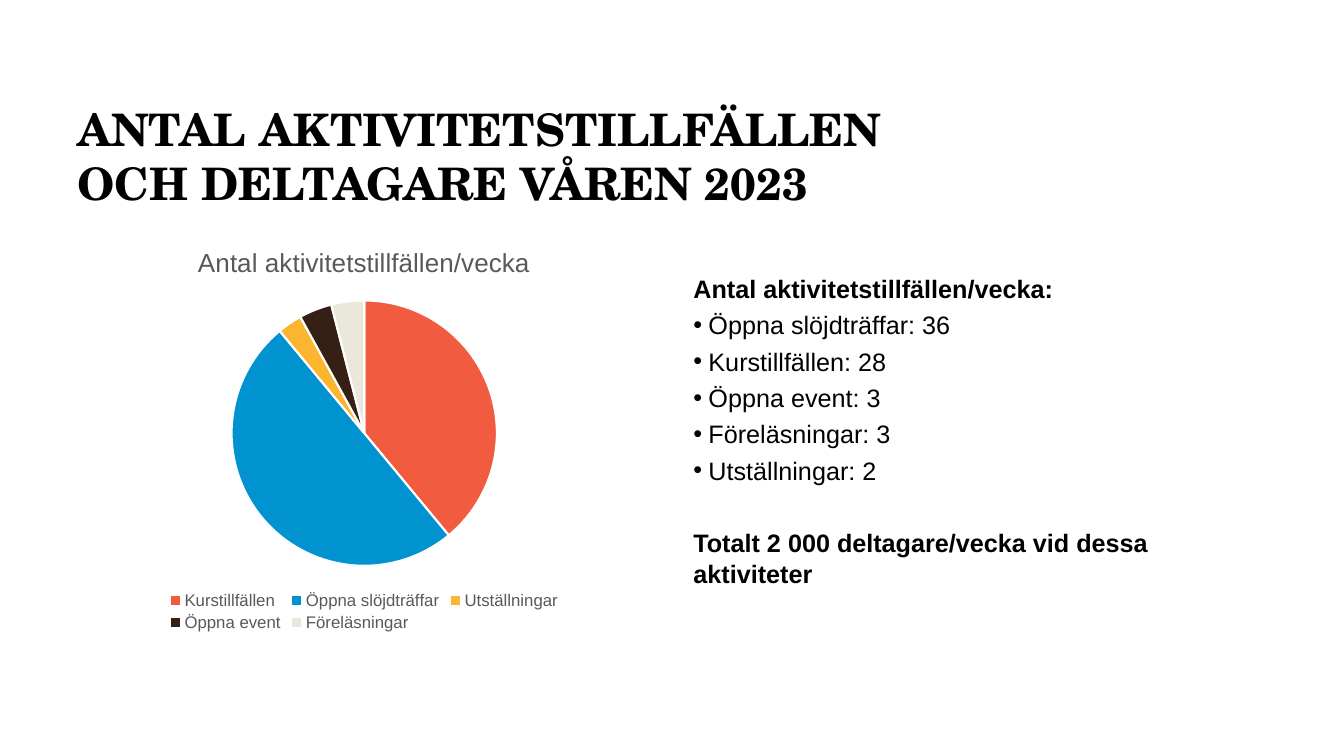
from lxml import etree
from pptx import Presentation
from pptx.chart.data import CategoryChartData
from pptx.dml.color import RGBColor
from pptx.enum.chart import XL_CHART_TYPE as ChartType, XL_LEGEND_POSITION as LegendPosition
from pptx.enum.text import MSO_ANCHOR as Anchor, MSO_AUTO_SIZE as AutoSize, PP_ALIGN as Align
from pptx.oxml import parse_xml
from pptx.oxml.ns import nsdecls, qn
from pptx.util import Cm, Pt

HEADING = "Antal aktivitetstillfällen/vecka"
LEFT, COLUMN_WIDTH, COLUMN_HEIGHT = Cm(1.7), Cm(14.96), Cm(10.29)


def style_font(font, size, color, name="Arial", bold=False):
    font.name = name
    font.size = Pt(size)
    font.bold = bold
    font.color.rgb = RGBColor.from_string(color)


def set_bullet(paragraph, char=None):
    """Give the paragraph a hanging bullet, or none when char is missing."""
    properties = paragraph._p.get_or_add_pPr()
    indent = Cm(0.38) if char else 0
    properties.set("marL", str(indent))
    properties.set("indent", str(-indent))
    if char:
        etree.SubElement(properties, qn("a:buChar")).set("char", char)
    else:
        etree.SubElement(properties, qn("a:buNone"))


deck = Presentation()
deck.slide_width, deck.slide_height = Cm(33.87), Cm(19.05)
slide = deck.slides.add_slide(deck.slide_layouts[1])

# Title
title = slide.shapes.title
title.left, title.top, title.width, title.height = LEFT, Cm(2.03), Cm(30.48), Cm(3.38)
title.text_frame.auto_size = AutoSize.NONE
title.text_frame.vertical_anchor = Anchor.BOTTOM
title.text_frame.text = "ANTAL AKTIVITETSTILLFÄLLEN\vOCH DELTAGARE VÅREN 2023"
headline = title.text_frame.paragraphs[0]
headline.alignment = Align.LEFT
style_font(headline.font, 32, "000000", "TeX Gyre Schola", True)

# Pie chart
activities = [
    ("Kurstillfällen", 39, "F15B40"),
    ("Öppna slöjdträffar", 50, "0093D0"),
    ("Utställningar", 3, "FCB52E"),
    ("Öppna event", 4, "361F14"),
    ("Föreläsningar", 4, "E9E8DB"),
]
shares = CategoryChartData()
shares.categories = [name for name, _, _ in activities]
shares.add_series(HEADING, [share for _, share, _ in activities])
pie = slide.shapes.add_chart(
    ChartType.PIE, LEFT, Cm(5.72), COLUMN_WIDTH, COLUMN_HEIGHT, shares).chart
style_font(pie.font, 10, "000000")
pie.has_title = True
pie.chart_title.text_frame.text = HEADING
style_font(pie.chart_title.text_frame.paragraphs[0].font, 18.6, "595959")
pie.has_legend = True
pie.legend.position = LegendPosition.BOTTOM
pie.legend.include_in_layout = False
style_font(pie.legend.font, 12, "595959")

plot = pie.plots[0]
plot.vary_by_categories = True
for index, (_, _, color) in enumerate(activities):
    slice_format = plot.series[0].points[index].format
    slice_format.fill.solid()
    slice_format.fill.fore_color.rgb = RGBColor.from_string(color)
    slice_format.line.color.rgb = RGBColor.from_string("FFFFFF")
    slice_format.line.width = Pt(1.5)

plot_area = pie._chartSpace.chart.plotArea
for automatic_layout in plot_area.findall(qn("c:layout")):
    plot_area.remove(automatic_layout)
plot_area.insert(0, parse_xml(
    f'<c:layout {nsdecls("c")}><c:manualLayout><c:layoutTarget val="inner"/>'
    '<c:xMode val="edge"/><c:yMode val="edge"/><c:x val="0.275"/><c:y val="0.18"/>'
    '<c:w val="0.45"/><c:h val="0.65"/></c:manualLayout></c:layout>'))

# Activity list
body = slide.placeholders[1]
body.left, body.top, body.width, body.height = Cm(17.22), Cm(6.73), COLUMN_WIDTH, COLUMN_HEIGHT
frame = body.text_frame
frame.auto_size = AutoSize.NONE
lines = [
    (HEADING + ":", None, 0),
    ("Öppna slöjdträffar: 36", "•", 3.8),
    ("Kurstillfällen: 28", "•", 3.8),
    ("Öppna event: 3", "•", 3.8),
    ("Föreläsningar: 3", "•", 3.8),
    ("Utställningar: 2", "•", 3.8),
    ("Totalt 2 000 deltagare/vecka vid dessa aktiviteter", None, 29),
]
for index, (text, bullet, space_before) in enumerate(lines):
    paragraph = frame.add_paragraph() if index else frame.paragraphs[0]
    paragraph.text = text
    paragraph.line_spacing = 1.03
    paragraph.space_before = Pt(space_before)
    set_bullet(paragraph, bullet)
    style_font(paragraph.font, 18, "000000", bold=bullet is None)

deck.save("out.pptx")
